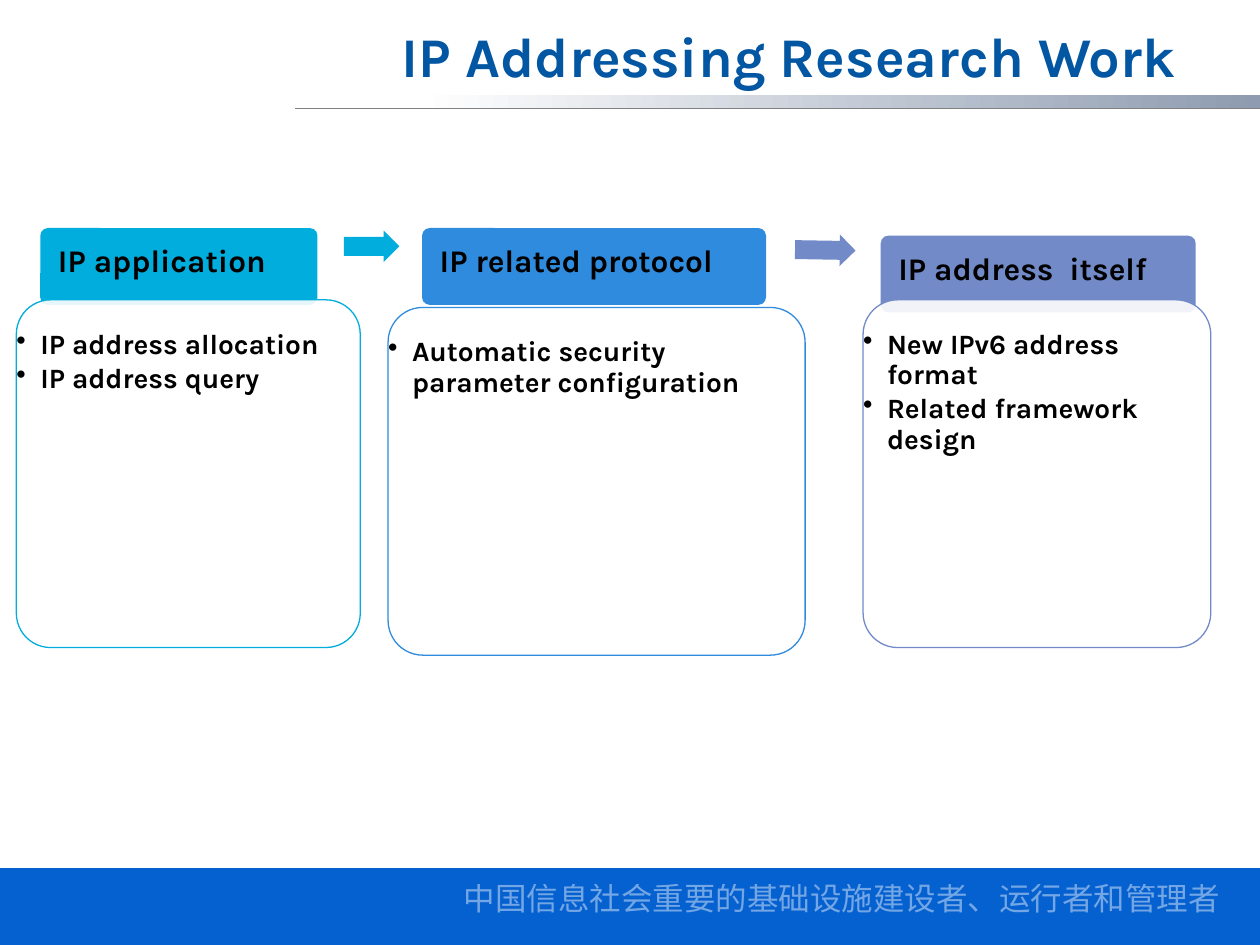
from dataclasses import dataclass

from lxml import etree
from pptx import Presentation
from pptx.dml.color import RGBColor as RGB
from pptx.enum.shapes import MSO_CONNECTOR as CONN, MSO_SHAPE as SHAPE
from pptx.enum.text import MSO_ANCHOR as ANCHOR, PP_ALIGN as ALIGN
from pptx.oxml.ns import qn
from pptx.util import Inches, Pt


@dataclass(frozen=True)
class Theme:
    latin: str = "Karla"
    cjk: str = "Noto Sans CJK SC"
    title_pt: int = 32
    head_pt: int = 18
    body_pt: int = 16
    title: str = "0256A2"
    ink: str = "000000"
    white: str = "FFFFFF"
    steel: str = "8E9BB0"
    rule: str = "808080"
    footer: str = "0661D0"
    cyan: str = "00ADDC"
    blue: str = "2F8BDD"
    violet: str = "738AC8"


class Deck:
    """Draws styled elements on the current slide."""

    def __init__(self, prs, theme):
        self.t = theme
        self.s = prs.slides.add_slide(prs.slide_layouts[6])

    def paint(self, fill, color, alpha=100):
        fill.solid()
        fill.fore_color.rgb = RGB.from_string(color)
        if alpha < 100:
            clr = next(fill._xPr.iter(qn("a:srgbClr")))
            etree.SubElement(clr, qn("a:alpha")).set("val", str(alpha * 1000))

    def shape(self, kind, box, color, alpha=100, line=None, adj=()):
        sp = self.s.shapes.add_shape(kind, *map(Inches, box))
        sp.shadow.inherit = False
        for i, value in enumerate(adj):
            sp.adjustments[i] = value
        self.paint(sp.fill, color, alpha)
        if line:
            sp.line.color.rgb = RGB.from_string(line)
            sp.line.width = Pt(0.75)
        else:
            sp.line.fill.background()
        return sp

    def fade(self, box, start, end, stop):
        sp = self.shape(SHAPE.RECTANGLE, box, start)
        sp.fill.gradient()
        sp.fill.gradient_angle = 180
        for gs, color, pos in zip(sp.fill.gradient_stops, (start, end), (0, stop)):
            gs.color.rgb = RGB.from_string(color)
            gs.position = pos

    def line(self, x1, y1, x2, y2, color):
        ln = self.s.shapes.add_connector(CONN.STRAIGHT, *map(Inches, (x1, y1, x2, y2)))
        ln.line.color.rgb = RGB.from_string(color)
        ln.line.width = Pt(0.75)
        etree.SubElement(ln._element.spPr, qn("a:effectLst"))

    def text(self, box, paras, size, color, alpha=100, font=None, bold=True, align=ALIGN.LEFT,
             anchor=ANCHOR.TOP, insets=(0.1, 0.05, 0.1, 0.05), spacing=None, bullet=False):
        tf = self.s.shapes.add_textbox(*map(Inches, box)).text_frame
        tf.word_wrap = True
        tf.vertical_anchor = anchor
        tf.margin_left, tf.margin_top, tf.margin_right, tf.margin_bottom = map(Inches, insets)
        for i, words in enumerate(paras):
            p = tf.add_paragraph() if i else tf.paragraphs[0]
            if bullet:
                self.bullet(p)
            p.alignment = align
            if spacing:
                p.line_spacing = spacing
            r = p.add_run()
            r.text = words
            r.font.size, r.font.bold = Pt(size), bold
            self.paint(r.font.fill, color, alpha)
            r.font.name = font or self.t.latin
            if font:
                etree.SubElement(r.font._element, qn("a:ea")).set("typeface", font)

    def bullet(self, p):
        pPr = p._p.get_or_add_pPr()
        pPr.set("marL", str(Inches(0.19)))
        pPr.set("indent", str(-Inches(0.19)))
        etree.SubElement(pPr, qn("a:buChar")).set("char", "•")
        p.space_after = Pt(2.4)

    def card(self, head, body, color, title, items):
        t = self.t
        x, y, w = head
        self.shape(SHAPE.ROUNDED_RECTANGLE, (x, y, w, 0.61), color, adj=[0.1])
        self.text((x, y, w, 0.41), [title], t.head_pt, t.ink,
                  insets=(0.14, 0.14, 0.14, 0.07), spacing=0.9)
        box = (*body, 2.76)
        self.shape(SHAPE.ROUNDED_RECTANGLE, box, t.white, 90, color, [0.1])
        self.text(box, items, t.body_pt, t.ink, insets=(0, 0.24, 0, 0), spacing=0.9, bullet=True)

    def arrow(self, box, color, turn=0):
        self.shape(SHAPE.RIGHT_ARROW, box, color, adj=[0.6, 0.5]).rotation = turn


def main():
    prs = Presentation()
    prs.slide_width, prs.slide_height = Inches(10), Inches(7.5)
    t = Theme()
    d = Deck(prs, t)

    d.fade((2.42, 0.75, 7.58, 0.11), t.steel, t.white, 0.88)
    d.shape(SHAPE.RECTANGLE, (0, 6.89, 10, 0.61), t.footer)
    d.line(10, 0.86, 2.34, 0.86, t.rule)
    d.text((3.28, 6.93, 6.8, 0.4), ["中国信息社会重要的基础设施建设者、运行者和管理者"],
           t.head_pt, t.white, 44, t.cjk, False, ALIGN.CENTER)
    d.text((2.64, 0, 7.36, 0.87), ["IP Addressing Research Work "], t.title_pt, t.title,
           align=ALIGN.CENTER, anchor=ANCHOR.MIDDLE)

    cards = [
        ((0.32, 1.81, 2.2), (0.13, 2.38, 2.73), t.cyan, "IP application",
         ["IP address allocation", "IP address query"]),
        ((3.35, 1.81, 2.73), (3.08, 2.44, 3.31), t.blue, "IP related protocol",
         ["Automatic security parameter configuration"]),
        ((6.99, 1.87, 2.5), (6.85, 2.38, 2.76), t.violet, "IP address  itself",
         ["New IPv6 address format", "Related framework design"]),
    ]
    for card in cards:
        d.card(*card)
    d.arrow((2.73, 1.83, 0.44, 0.25), t.cyan)
    d.arrow((6.31, 1.86, 0.48, 0.25), t.violet, 0.9)

    prs.save("out.pptx")


if __name__ == "__main__":
    main()
